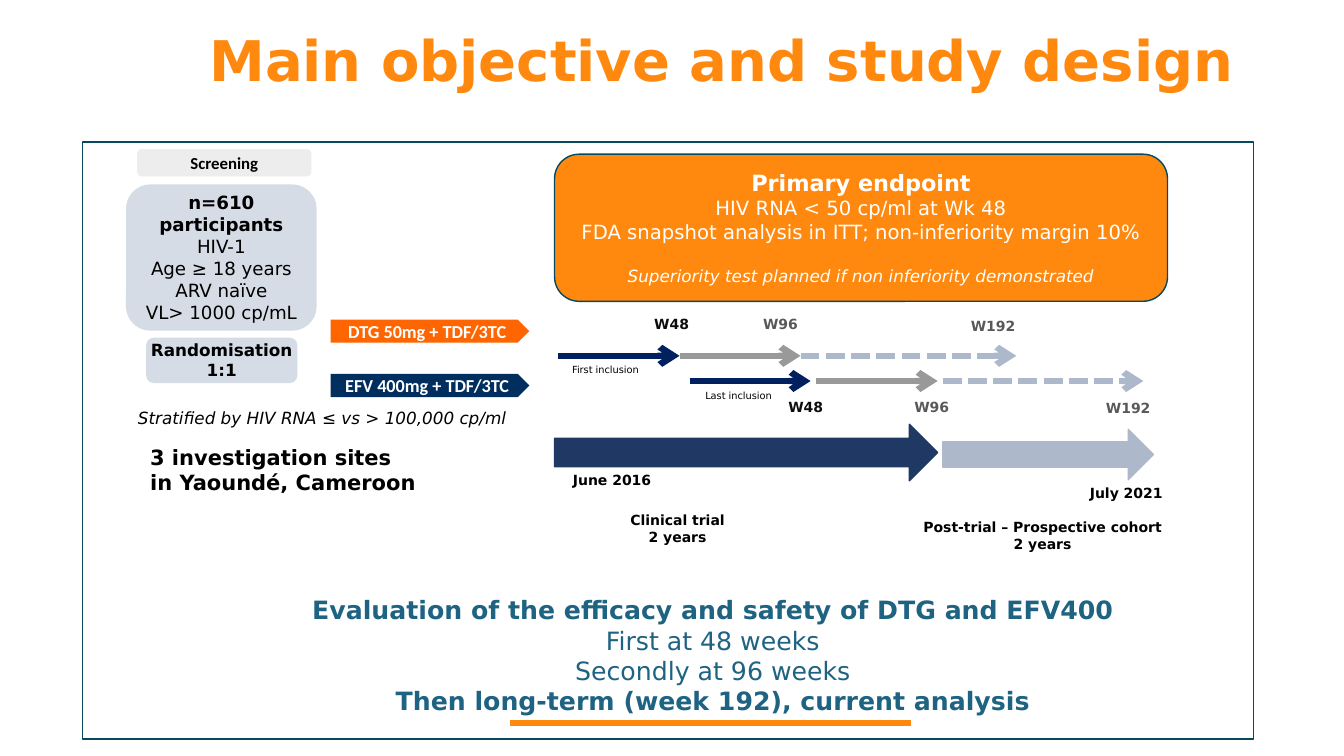
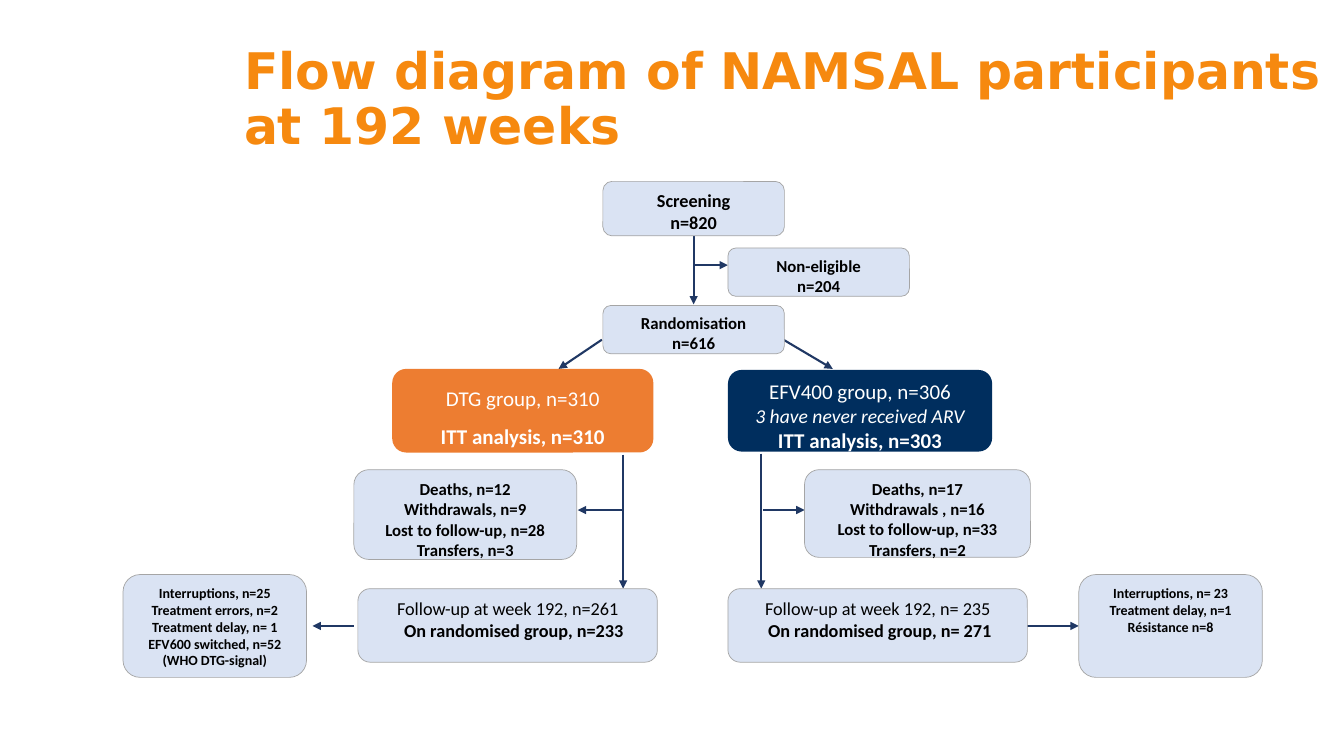
import lxml.etree
import pptx
import pptx.dml.color
import pptx.enum.dml
import pptx.enum.shapes
import pptx.enum.text
import pptx.oxml.ns
import pptx.util

Inches = pptx.util.Inches
Pt = pptx.util.Pt
SHAPE = pptx.enum.shapes.MSO_SHAPE
ALIGN = pptx.enum.text.PP_ALIGN
ANCHOR = pptx.enum.text.MSO_ANCHOR
qn = pptx.oxml.ns.qn

COLORS = {
    "orange": "FF890E", "title_amber": "F6890F", "dtg": "FF6501",
    "dtg_group": "ED7D31", "efv": "002E5E", "navy": "203864",
    "week_navy": "002060", "week_gray": "999999", "mist": "ADB9CA",
    "slate": "D6DCE5", "pale_blue": "DAE3F3", "light_gray": "EDEDED",
    "border": "A5A5A5", "frame": "054960", "teal": "1F6382",
    "label_gray": "595959", "ink": "0D0D0D", "black": "000000", "white": "FFFFFF",
}
SANS, CALIBRI = "DejaVu Sans", "Calibri"


def rgb(name):
    return pptx.dml.color.RGBColor.from_string(COLORS[name])


def style_paragraph(p, size=12, font=SANS, color="black", bold=False, italic=False,
                    align=ALIGN.CENTER, spacing=None, before=None, indent=None):
    p.alignment = align
    if spacing:
        p.line_spacing = spacing
    if before:
        p.space_before = Pt(before)
    if indent:
        p._p.get_or_add_pPr().set("marL", str(Inches(indent)))
    for r in p.runs:
        r.font.size = Pt(size)
        r.font.name = font
        r.font.bold = bold
        r.font.italic = italic
        r.font.color.rgb = rgb(color)


def write(sp, text, lines=None, anchor=ANCHOR.TOP, insets=None, **style):
    """Fill a shape with text; lines maps a line number to its own style changes."""
    tf = sp.text_frame
    tf.word_wrap = True
    tf.vertical_anchor = anchor
    if insets:
        tf.margin_left, tf.margin_top, tf.margin_right, tf.margin_bottom = map(Inches, insets)
    tf.text = text
    for i, p in enumerate(tf.paragraphs):
        style_paragraph(p, **{**style, **(lines or {}).get(i, {})})


def add_text(s, at, text, **style):
    write(s.shapes.add_textbox(*map(Inches, at)), text, **style)


def add_box(s, at, text="", kind=SHAPE.ROUNDED_RECTANGLE, fill=None, line=None,
            weight=1, **style):
    sp = s.shapes.add_shape(kind, *map(Inches, at))
    sp.shadow.inherit = False
    if fill:
        sp.fill.solid()
        sp.fill.fore_color.rgb = rgb(fill)
    else:
        sp.fill.background()
    if line:
        sp.line.color.rgb = rgb(line)
        sp.line.width = Pt(weight)
    else:
        sp.line.fill.background()
    if text:
        write(sp, text, **style)


def add_line(s, start, end, color, weight, arrow=None, dashed=False):
    c = s.shapes.add_connector(pptx.enum.shapes.MSO_CONNECTOR.STRAIGHT,
                               *map(Inches, (*start, *end)))
    c.line.color.rgb = rgb(color)
    c.line.width = Pt(weight)
    if dashed:
        c.line.dash_style = pptx.enum.dml.MSO_LINE.SQUARE_DOT
    spPr = c.element.spPr
    if arrow:
        lxml.etree.SubElement(spPr.find(qn("a:ln")), qn("a:tailEnd"), type=arrow)
    lxml.etree.SubElement(spPr, qn("a:effectLst"))


def add_title(s, left, top, text, size, color, align):
    add_text(s, (left, top, 10.91, 1.34), text, size=size, color=color, bold=True,
             align=align, spacing=0.9, insets=(0, 0, 0, 0))


def add_flow_box(s, at, text, size, **style):
    add_box(s, at, text, fill="pale_blue", line="border", weight=0.5,
            size=size, font=CALIBRI, **style)


def add_enrolment(s):
    no_insets = (0, 0, 0, 0)
    add_box(s, (1.36, 1.48, 1.73, 0.27), "Screening", fill="light_gray",
            anchor=ANCHOR.MIDDLE, font=CALIBRI, bold=True)
    add_box(s, (1.25, 1.83, 1.89, 1.45),
            "n=610\nparticipants\nHIV-1\nAge ≥ 18 years\nARV naïve\nVL> 1000 cp/mL",
            fill="slate", insets=no_insets, size=13,
            lines={0: {"bold": True}, 1: {"bold": True}})
    add_box(s, (1.45, 3.35, 1.5, 0.45), "Randomisation 1:1", fill="slate",
            insets=no_insets, bold=True)
    for top, text, fill in ((3.17, "DTG 50mg + TDF/3TC", "dtg"),
                            (3.71, "EFV 400mg + TDF/3TC", "efv")):
        add_box(s, (3.28, top, 1.97, 0.23), text, kind=SHAPE.PENTAGON, fill=fill,
                anchor=ANCHOR.MIDDLE, size=13, font=CALIBRI, color="white", bold=True)
    add_text(s, (1.27, 4, 3.98, 0.3), "Stratified by HIV RNA ≤ vs > 100,000 cp/ml",
             italic=True, align=ALIGN.LEFT)
    add_text(s, (1.39, 4.36, 3.11, 0.86), "3 investigation sites\nin Yaoundé, Cameroon",
             size=15, bold=True, align=ALIGN.LEFT)


def add_timeline(s):
    for left, top, width, height, color in ((5.5, 4.21, 3.8, 0.56, "navy"),
                                            (9.35, 4.26, 2.09, 0.5, "mist")):
        add_box(s, (left, top, width, height), kind=SHAPE.RIGHT_ARROW, fill=color, line=color)

    colors = ("week_navy", "week_gray", "mist")
    inclusions = (
        (3.53, ((5.53, 6.74), (6.74, 7.94), (7.94, 10.08))),
        (3.78, ((6.84, 8.04), (8.09, 9.3), (9.35, 11.34))),
    )
    for y, spans in inclusions:
        for (start, end), color in zip(spans, colors):
            add_line(s, (start, y), (end, y), color, 4.5, "arrow", dashed=color == "mist")

    for left, top, text, color in (
            (6.39, 3.08, "W48", "ink"), (7.47, 3.08, "W96", "label_gray"),
            (9.53, 3.1, "W192", "label_gray"), (7.72, 3.9, "W48", "ink"),
            (8.97, 3.9, "W96", "label_gray"), (10.87, 3.91, "W192", "label_gray")):
        add_text(s, (left, top, 0.85, 0.27), text, size=10, color=color, bold=True,
                 align=ALIGN.LEFT)
    for left, top, text in ((5.4, 3.56, "First inclusion"), (6.72, 3.82, "Last inclusion")):
        add_text(s, (left, top, 1.21, 0.22), text, size=7)
    for at, text in (
            ((5.53, 4.63, 1.08, 0.27), "June 2016"),
            ((10.63, 4.76, 1.08, 0.27), "July 2021"),
            ((5.89, 5.02, 1.66, 0.44), "Clinical trial\n2 years"),
            ((8.95, 5.09, 2.78, 0.44), "Post-trial – Prospective cohort\n2 years")):
        add_text(s, at, text, size=10, bold=True, anchor=ANCHOR.MIDDLE)


def build_design_slide(s):
    add_box(s, (0.82, 1.41, 11.61, 5.92), kind=SHAPE.RECTANGLE, line="frame")
    add_title(s, 1.7, 0.33, "Main objective and study design", 40, "orange", ALIGN.CENTER)
    add_enrolment(s)
    add_timeline(s)
    add_box(s, (5.5, 1.53, 6.08, 1.46),
            "Primary endpoint\nHIV RNA < 50 cp/ml at Wk 48\n"
            "FDA snapshot analysis in ITT; non-inferiority margin 10%\n"
            "Superiority test planned if non inferiority demonstrated",
            fill="orange", line="frame", anchor=ANCHOR.MIDDLE, size=14, color="white",
            lines={0: {"size": 16, "bold": True},
                   3: {"size": 12, "italic": True, "before": 16}})
    add_text(s, (1.71, 5.85, 10.72, 1.31),
             "Evaluation of the efficacy and safety of DTG and EFV400\nFirst at 48 weeks\n"
             "Secondly at 96 weeks\nThen long-term (week 192), current analysis",
             size=18, color="teal", lines={0: {"bold": True}, 3: {"bold": True}})
    add_line(s, (5.06, 7.17), (9.04, 7.17), "orange", 4)


def add_group_boxes(s):
    bold = {"bold": True}
    add_box(s, (3.89, 3.66, 2.59, 0.83), "DTG group, n=310\nITT analysis, n=310",
            fill="dtg_group", insets=(0.1, 0, 0.1, 0.05), size=15, font=CALIBRI,
            color="white", spacing=1.5, lines={1: bold})
    add_box(s, (7.22, 3.67, 2.62, 0.81),
            "EFV400 group, n=306\n3 have never received ARV\nITT analysis, n=303",
            fill="efv", size=15, font=CALIBRI, color="white",
            lines={1: {"size": 14, "italic": True}, 2: bold})
    for left, text, indent in (
            (3.55, "Follow-up at week 192, n=261\nOn randomised group, n=233", 0.12),
            (7.22, "Follow-up at week 192, n= 235\nOn randomised group, n= 271", 0.04)):
        add_flow_box(s, (left, 5.84, 2.97, 0.73), text, 13,
                     lines={1: {"bold": True, "indent": indent}})


def build_flow_slide(s):
    add_title(s, 2.42, 0.46, "Flow diagram of NAMSAL participants at 192 weeks", 36,
              "title_amber", ALIGN.LEFT)
    for start, end in (
            ((6.88, 2.33), (6.88, 3.02)), ((6.88, 2.63), (7.22, 2.63)),
            ((5.97, 3.37), (5.54, 3.66)), ((7.77, 3.37), (8.26, 3.66)),
            ((6.18, 4.51), (6.18, 5.84)), ((7.55, 4.5), (7.55, 5.84)),
            ((6.18, 5.06), (5.73, 5.06)), ((7.57, 5.06), (7.98, 5.06)),
            ((3.51, 6.21), (3.1, 6.21)), ((10.19, 6.21), (10.7, 6.21))):
        add_line(s, start, end, "navy", 1.5, "triangle")
    add_group_boxes(s)
    for at, size, text in (
            ((5.98, 1.8, 1.8, 0.54), 13, "Screening\nn=820"),
            ((7.22, 2.46, 1.8, 0.48), 12, "Non-eligible\nn=204"),
            ((5.98, 3.03, 1.8, 0.48), 12, "Randomisation\nn=616"),
            ((3.51, 4.66, 2.21, 0.89), 12,
             "Deaths, n=12\nWithdrawals, n=9\nLost to follow-up, n=28\nTransfers, n=3"),
            ((7.98, 4.66, 2.24, 0.87), 12,
             "Deaths, n=17\nWithdrawals , n=16\nLost to follow-up, n=33\nTransfers, n=2"),
            ((1.22, 5.7, 1.82, 1.02), 10,
             "Interruptions, n=25\nTreatment errors, n=2\nTreatment delay, n= 1\n"
             "EFV600 switched, n=52\n(WHO DTG-signal)"),
            ((10.7, 5.7, 1.82, 1.02), 10,
             "Interruptions, n= 23\nTreatment delay, n=1\nRésistance n=8")):
        add_flow_box(s, at, text, size, bold=True)


def main():
    prs = pptx.Presentation()
    prs.slide_width, prs.slide_height = Inches(13.33), Inches(7.5)
    for build in (build_design_slide, build_flow_slide):
        build(prs.slides.add_slide(prs.slide_layouts[6]))
    prs.save("out.pptx")


if __name__ == "__main__":
    main()
